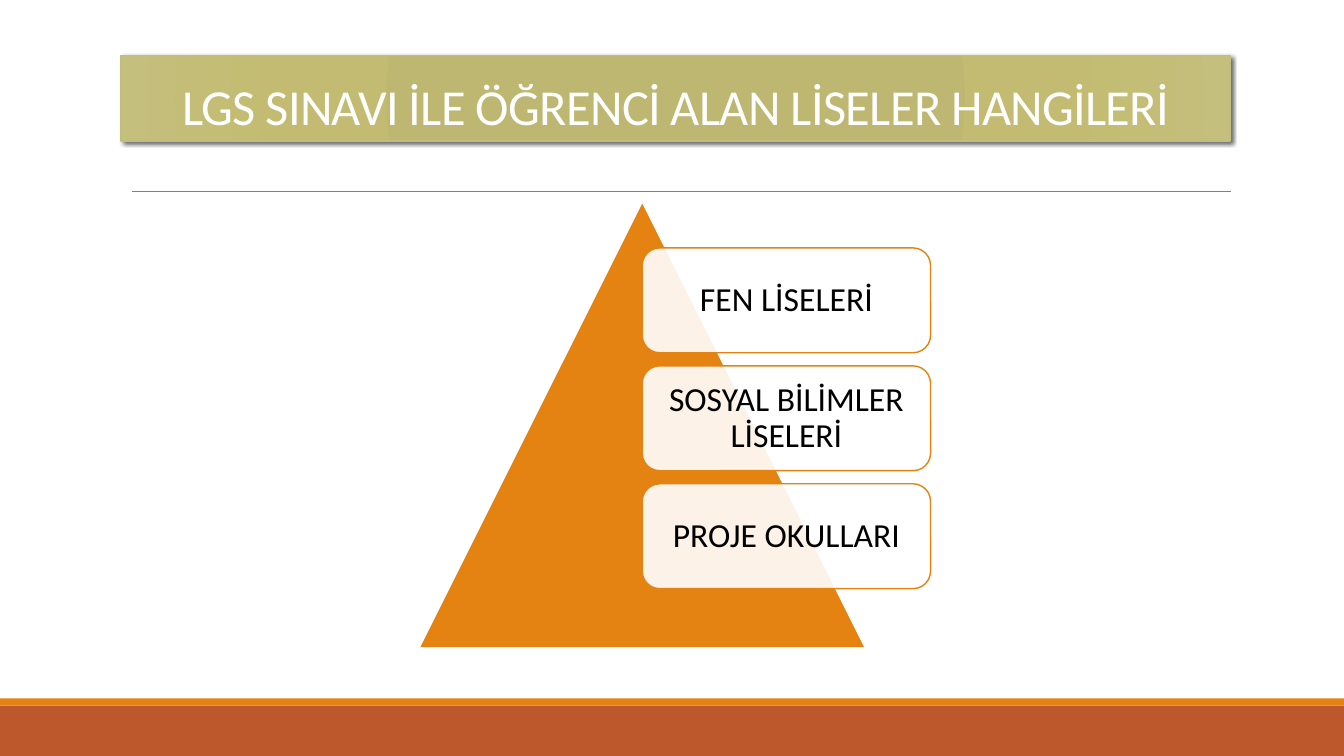
"""Build a slide on the high schools that admit students by the LGS exam."""
from dataclasses import dataclass

from lxml import etree
from pptx import Presentation
from pptx import util as u
from pptx.dml.color import RGBColor
from pptx.enum import shapes, text
from pptx.oxml import ns

PX = 9144
FONT = "Calibri"
HUES = {
    "white": "FFFFFF",
    "black": "000000",
    "orange": "E48312",
    "rust": "BD582C",
    "gray": "808080",
    "edge": "C2BC80",
}
GRADE = [(0, "BEB76E"), (34, "BEB771"), (70, "C3BB71"), (100, "C5BF7D")]
KINDS = shapes.MSO_SHAPE


@dataclass
class Box:
    """Hold a place in px."""
    left: int
    top: int
    width: int
    height: int

    def emu(self) -> list[u.Emu]:
        """Return the place in EMU."""
        return [u.Emu(n * PX) for n in (self.left, self.top, self.width, self.height)]


@dataclass
class Form:
    """Describe a plain filled shape."""
    kind: int
    box: Box
    hue: str


FORMS = [
    Form(KINDS.RECTANGLE, Box(0, 700, 1333, 50), "rust"),
    Form(KINDS.RECTANGLE, Box(0, 693, 1333, 7), "orange"),
    Form(KINDS.ISOSCELES_TRIANGLE, Box(417, 202, 440, 440), "orange"),
]
SCHOOLS = ["FEN LİSELERİ", "SOSYAL BİLİMLER LİSELERİ", "PROJE OKULLARI"]
CARD = Box(637, 246, 286, 104)
STEP = 117


def color(hue: str) -> RGBColor:
    """Return a named color."""
    return RGBColor.from_string(HUES[hue])


def add(parent, tag: str, **attrs):
    """Append a DrawingML element."""
    return etree.SubElement(parent, ns.qn(f"a:{tag}"), {k: str(v) for k, v in attrs.items()})


def style(para, size: int, hue: str, space: float) -> None:
    """Format a centred paragraph."""
    para.alignment = text.PP_ALIGN.CENTER
    para.line_spacing = space
    para.font.name = FONT
    para.font.size = u.Pt(size)
    para.font.color.rgb = color(hue)


def draw_form(slide, form: Form):
    """Draw a filled shape without outline."""
    shape = slide.shapes.add_shape(form.kind, *form.box.emu())
    shape.shadow.inherit = False
    shape.fill.solid()
    shape.fill.fore_color.rgb = color(form.hue)
    shape.line.fill.background()
    return shape


def draw_card(slide, label: str, box: Box) -> None:
    """Draw a translucent labelled card."""
    card = draw_form(slide, Form(KINDS.ROUNDED_RECTANGLE, box, "white"))
    tint = card.fill._xPr.find(".//" + ns.qn("a:srgbClr"))
    add(tint, "alpha", val=90000)
    card.line.color.rgb = color("orange")
    card.line.width = u.Pt(1)
    frame = card.text_frame
    frame.word_wrap = True
    frame.vertical_anchor = text.MSO_ANCHOR.MIDDLE
    frame.margin_left = frame.margin_right = u.Inches(0.1)
    frame.margin_top = frame.margin_bottom = u.Inches(0.1)
    frame.text = label
    style(frame.paragraphs[0], 24, "black", 0.9)


def draw_title(slide, label: str) -> None:
    """Format the title as a shaded banner."""
    title = slide.shapes.title
    title.left, title.top, title.width, title.height = Box(120, 55, 1100, 85).emu()
    props = title._element.spPr
    grad = add(props, "gradFill", rotWithShape=1)
    stops = add(grad, "gsLst")
    for spot, hue in GRADE:
        add(add(stops, "gs", pos=spot * 1000), "srgbClr", val=hue)
    add(add(grad, "path", path="circle"), "fillToRect", l=100000, t=100000, r=100000, b=100000)
    title.line.color.rgb = color("edge")
    title.line.width = u.Pt(1)
    shade = add(add(props, "effectLst"), "outerShdw", blurRad=u.Pt(3), dist=u.Pt(2),
                dir=2700000, algn="tl", rotWithShape=0)
    add(add(shade, "srgbClr", val=HUES["black"]), "alpha", val=60000)
    frame = title.text_frame
    frame.text = label
    frame.word_wrap = True
    frame.auto_size = text.MSO_AUTO_SIZE.NONE
    frame.vertical_anchor = text.MSO_ANCHOR.BOTTOM
    para = frame.paragraphs[0]
    style(para, 36, "white", 0.85)
    para.runs[0].font._element.set("spc", "-50")


def draw_rule(slide) -> None:
    """Draw the thin line below the title."""
    ends = [u.Emu(n * PX) for n in (131, 190, 1221, 190)]
    rule = slide.shapes.add_connector(shapes.MSO_CONNECTOR.STRAIGHT, *ends)
    rule.line.color.rgb = color("gray")
    rule.line.width = u.Pt(0.5)
    add(rule._element.spPr, "effectLst")


def main() -> None:
    """Build and save the slide."""
    deck = Presentation()
    deck.slide_width, deck.slide_height = u.Emu(1333 * PX), u.Emu(750 * PX)
    slide = deck.slides.add_slide(deck.slide_layouts[5])
    draw_title(slide, "LGS SINAVI İLE ÖĞRENCİ ALAN LİSELER HANGİLERİ")
    draw_rule(slide)
    for form in FORMS:
        draw_form(slide, form)
    for i, school in enumerate(SCHOOLS):
        draw_card(slide, school, Box(CARD.left, CARD.top + i * STEP, CARD.width, CARD.height))
    deck.save("out.pptx")


if __name__ == "__main__":
    main()
